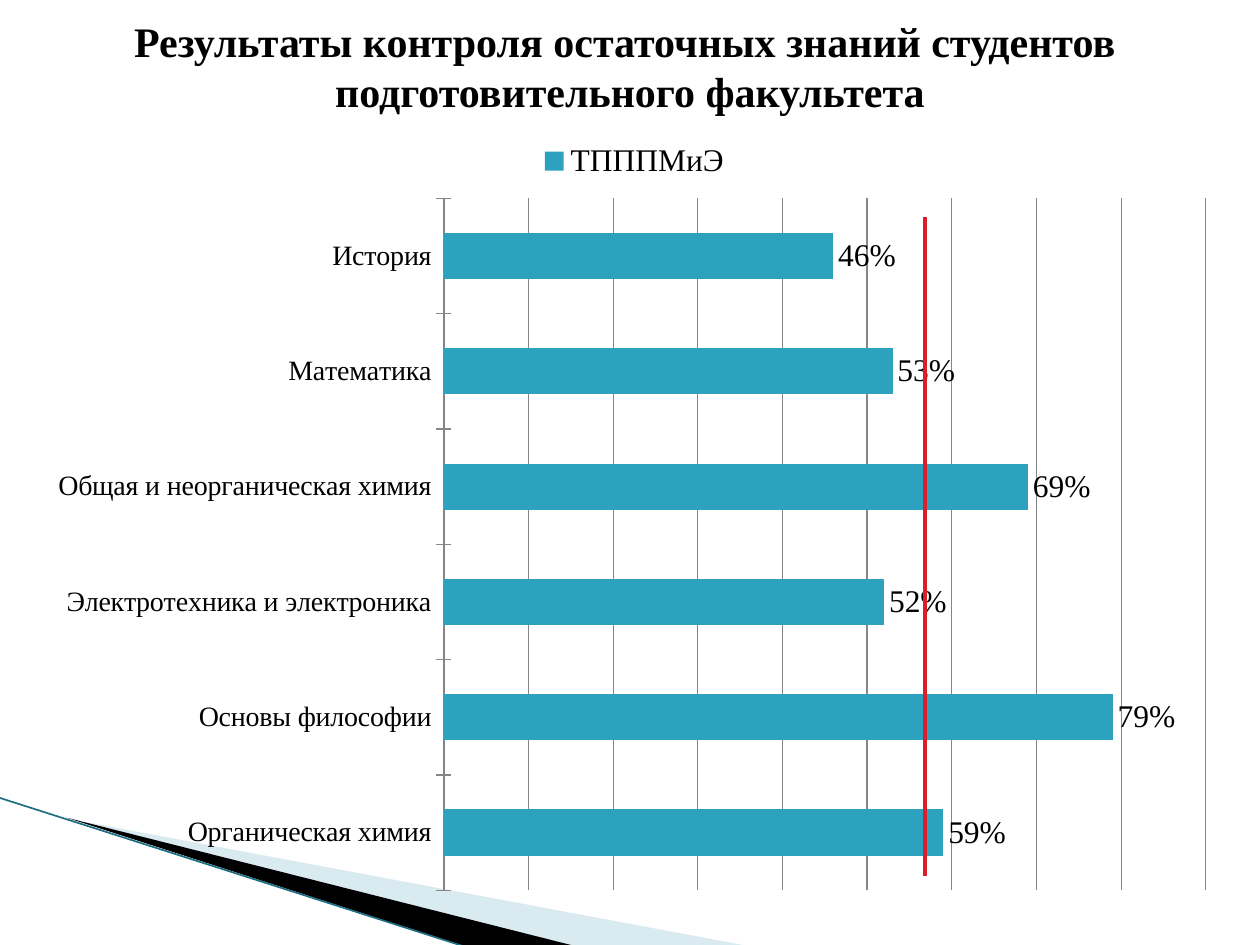
from dataclasses import dataclass

import pptx
import pptx.chart.data
import pptx.dml.color
import pptx.enum.chart
import pptx.enum.shapes
import pptx.enum.text
import pptx.oxml
import pptx.oxml.ns
import pptx.util
from pptx.util import Inches


@dataclass(frozen=True)
class Theme:
    """Colours, font and type sizes of the slide."""
    font: str = "Times New Roman"
    ink: str = "000000"
    bar: str = "2DA2BF"
    grid: str = "868686"
    threshold: str = "DA1F28"
    wedge: str = "A0CBDC"
    edge: str = "1B6E83"
    title_size: int = 24
    chart_size: int = 18
    category_size: int = 16


THEME = Theme()
TITLE = ["Результаты контроля остаточных знаний студентов ",
         "подготовительного факультета"]
RESULTS = {
    "Органическая химия": 59,
    "Основы философии": 79,
    "Электротехника и электроника": 52,
    "Общая и неорганическая химия": 69,
    "Математика": 53,
    "История": 46,
}


def color(code):
    """Turn a hex code into a colour."""
    return pptx.dml.color.RGBColor.from_string(code)


def style_font(font, size, bold=False):
    """Apply the theme font in the given size."""
    font.name = THEME.font
    font.size = pptx.util.Pt(size)
    font.bold = bold
    font.color.rgb = color(THEME.ink)


def add_line(page, start, end, code, width):
    """Draw a straight line without a shadow."""
    line = page.shapes.add_connector(
        pptx.enum.shapes.MSO_CONNECTOR.STRAIGHT,
        *(Inches(value) for value in start + end))
    line.line.color.rgb = color(code)
    line.line.width = pptx.util.Pt(width)
    properties = line._element.spPr
    properties.append(properties.makeelement(pptx.oxml.ns.qn("a:effectLst"), {}))


def add_polygon(page, left, top, points, code, opacity=100):
    """Draw a filled outline whose points are relative to its corner."""
    corners = [(Inches(left + x), Inches(top + y)) for x, y in points]
    builder = page.shapes.build_freeform(*corners[0], scale=1.0)
    builder.add_line_segments(corners[1:], close=True)
    shape = builder.convert_to_shape()
    shape.shadow.inherit = False
    shape.fill.solid()
    shape.fill.fore_color.rgb = color(code)
    shape.line.fill.background()
    if opacity < 100:
        tone = shape._element.spPr.find(".//" + pptx.oxml.ns.qn("a:srgbClr"))
        alpha = tone.makeelement(pptx.oxml.ns.qn("a:alpha"), {"val": str(opacity * 1000)})
        tone.append(alpha)


def add_corner(page, left, top):
    """Place the wedge decoration of the lower left corner."""
    add_polygon(page, left + 0.56, top + 0.17,
                [(0, 0), (5.4, 1.01), (4.01, 1.01)], THEME.wedge, 40)
    add_polygon(page, left + 0.54, top + 0.16,
                [(0, 0), (4.04, 1.02), (3.19, 1.03)], THEME.ink)
    add_line(page, (left, top), (left + 3.72, top + 1.19), THEME.edge, 0.95)


def fill_title(page, left, top, width, height):
    """Place and write the slide title."""
    box = page.shapes.title
    box.left, box.top = Inches(left), Inches(top)
    box.width, box.height = Inches(width), Inches(height)
    frame = box.text_frame
    frame.word_wrap = True
    frame.auto_size = pptx.enum.text.MSO_AUTO_SIZE.NONE
    frame.vertical_anchor = pptx.enum.text.MSO_ANCHOR.MIDDLE
    frame.margin_bottom = Inches(0.4)
    para = frame.paragraphs[0]
    para.alignment = pptx.enum.text.PP_ALIGN.CENTER
    for index, text in enumerate(TITLE):
        if index:
            para.add_line_break()
        span = para.add_run()
        span.text = text
        style_font(span.font, THEME.title_size, bold=True)


def set_plot_area(chart, left, top, width, height):
    """Fix the inner plot area as fractions of the chart."""
    area = chart._chartSpace.chart.plotArea
    old = area.find(pptx.oxml.ns.qn("c:layout"))
    if old is not None:
        area.remove(old)
    values = {"x": left, "y": top, "w": width, "h": height}
    parts = "".join(f'<c:{key} val="{value}"/>' for key, value in values.items())
    area.insert(0, pptx.oxml.parse_xml(
        f'<c:layout {pptx.oxml.ns.nsdecls("c")}><c:manualLayout>'
        '<c:layoutTarget val="inner"/><c:xMode val="edge"/><c:yMode val="edge"/>'
        f'{parts}</c:manualLayout></c:layout>'))


def style_axes(chart):
    """Format the subject axis and the hidden percentage axis."""
    subjects, percents = chart.category_axis, chart.value_axis
    subjects.major_tick_mark = pptx.enum.chart.XL_TICK_MARK.CROSS
    subjects.has_major_gridlines = False
    style_font(subjects.tick_labels.font, THEME.category_size)
    percents.visible = False
    percents.minimum_scale, percents.maximum_scale = 0, 90
    percents.major_unit = 10
    percents.has_major_gridlines = True
    for line in (subjects.format.line, percents.major_gridlines.format.line):
        line.color.rgb = color(THEME.grid)
        line.width = pptx.util.Pt(0.75)


def add_results(page, left, top, width, height):
    """Place the bar chart of results and its threshold line."""
    data = pptx.chart.data.CategoryChartData(number_format='0"%"')
    data.categories = list(RESULTS)
    data.add_series("ТПППМиЭ", list(RESULTS.values()))
    chart = page.shapes.add_chart(
        pptx.enum.chart.XL_CHART_TYPE.BAR_CLUSTERED,
        Inches(left), Inches(top), Inches(width), Inches(height), data).chart
    style_font(chart.font, THEME.chart_size)
    chart.has_title = False
    chart.has_legend = True
    chart.legend.position = pptx.enum.chart.XL_LEGEND_POSITION.TOP
    chart.legend.include_in_layout = False
    style_font(chart.legend.font, THEME.chart_size)
    style_axes(chart)
    plot = chart.plots[0]
    plot.vary_by_categories = False
    plot.gap_width = 150
    bars = plot.series[0]
    bars.format.fill.solid()
    bars.format.fill.fore_color.rgb = color(THEME.bar)
    labels = bars.data_labels
    labels.show_value = True
    labels.number_format = '0"%"'
    labels.number_format_is_linked = False
    labels.position = pptx.enum.chart.XL_LABEL_POSITION.OUTSIDE_END
    style_font(labels.font, THEME.chart_size)
    set_plot_area(chart, 0.34, 0.09, 0.64, 0.89)
    add_line(page, (left + 7.03, top + 0.7), (left + 7.03, top + 5.93),
             THEME.threshold, 2)


def main():
    """Build and save the deck."""
    deck = pptx.Presentation()
    deck.slide_width, deck.slide_height = Inches(10), Inches(7.5)
    page = deck.slides.add_slide(deck.slide_layouts.get_by_name("Title Only"))
    add_corner(page, -0.01, 6.33)
    fill_title(page, 0.5, 0.3, 9, 0.79)
    add_results(page, 0.31, 1.02, 9.45, 6.17)
    deck.save("out.pptx")


if __name__ == "__main__":
    main()
